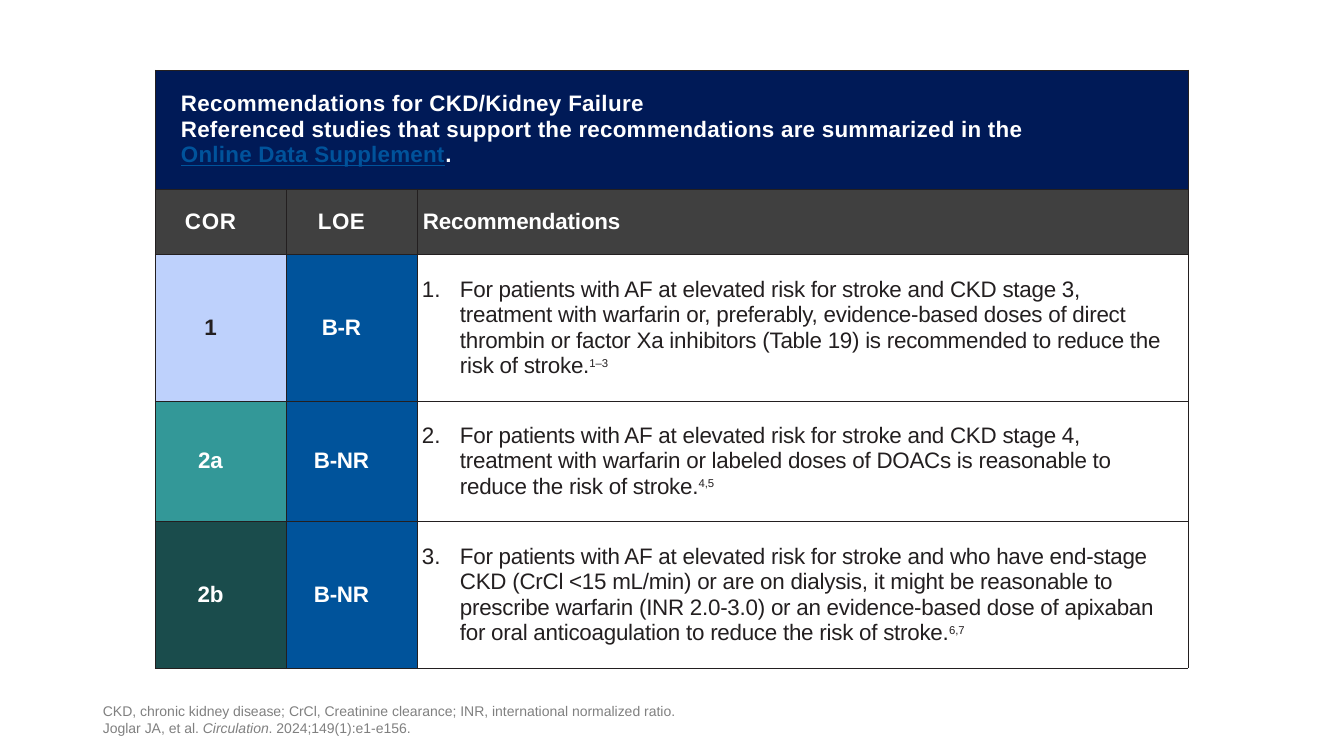
from dataclasses import dataclass

from lxml import etree
from pptx import Presentation
from pptx import util as u
from pptx.dml.color import RGBColor
from pptx.enum import text
from pptx.oxml.ns import qn

PX = 914400 / 100.8


@dataclass(frozen=True)
class Theme:
    font: str = "Arial"
    white: str = "FFFFFF"
    ink: str = "231F20"
    navy: str = "001A57"
    blue: str = "00539B"
    charcoal: str = "404040"
    grey: str = "808080"
    body: int = 16
    reference: int = 14
    footnote: int = 10


theme = Theme()


def px(count):
    """Turn whole pixels into EMU."""
    return u.Emu(round(count * PX))


def add_span(paragraph, words, color, size=theme.body, bold=False, spacing=0.0):
    """Append a formatted run; spacing is letter spacing in points."""
    span = paragraph.add_run()
    span.text = words
    span.font.name = theme.font
    span.font.size = u.Pt(size)
    span.font.bold = bold
    span.font.color.rgb = RGBColor.from_string(color)
    span.font._element.set("spc", str(round(spacing * 100)))
    return span


deck = Presentation()
deck.slide_width, deck.slide_height = px(1344), px(756)
page = deck.slides.add_slide(deck.slide_layouts[6])

column_widths = [131, 131, 771]
row_heights = [119, 65, 147, 120, 147]
table = page.shapes.add_table(
    len(row_heights), len(column_widths), px(155), px(70),
    px(sum(column_widths)), px(sum(row_heights)),
).table
table.first_row = False
table.horz_banding = False
for column, width in zip(table.columns, column_widths):
    column.width = px(width)
for row, height in zip(table.rows, row_heights):
    row.height = px(height)

# Banner
banner = table.cell(0, 0)
banner.merge(table.cell(0, 2))
heading = banner.text_frame.paragraphs[0]
add_span(heading, "Recommendations for CKD/Kidney Failure", theme.white, bold=True, spacing=0.25)
support = banner.text_frame.add_paragraph()
support.line_spacing = 1.03
add_span(support, "Referenced studies that support the recommendations are summarized in the ",
         theme.white, bold=True, spacing=0.2)
support.add_line_break()
link = add_span(support, "Online Data Supplement", theme.blue, bold=True, spacing=0.2)
link.font.underline = True
add_span(support, ".", theme.white, bold=True)

# Column headings and graded recommendations
fills = {(0, column): theme.navy for column in range(3)}
for column, (label, spacing) in enumerate([("COR", 0.5), ("LOE", 0.4), ("Recommendations", -0.1)]):
    paragraph = table.cell(1, column).text_frame.paragraphs[0]
    add_span(paragraph, label, theme.white, bold=True, spacing=spacing)
    fills[1, column] = theme.charcoal

recommendations = [
    ("1", "BED1FC", theme.ink, "B-R",
     "For patients with AF at elevated risk for stroke and CKD stage 3, treatment with "
     "warfarin or, preferably, evidence-based doses of direct thrombin or factor Xa "
     "inhibitors (Table 19) is recommended to reduce the risk of stroke.", "1–3"),
    ("2a", "339898", theme.white, "B-NR",
     "For patients with AF at elevated risk for stroke and CKD stage 4, treatment with "
     "warfarin or labeled doses of DOACs is reasonable to reduce the risk of stroke.", "4,5"),
    ("2b", "1A4C4C", theme.white, "B-NR",
     "For patients with AF at elevated risk for stroke and who have end-stage CKD "
     "(CrCl <15 mL/min) or are on dialysis, it might be reasonable to prescribe warfarin "
     "(INR 2.0-3.0) or an evidence-based dose of apixaban for oral anticoagulation to "
     "reduce the risk of stroke.", "6,7"),
]
for number, (grade, grade_fill, grade_ink, evidence, advice, references) in enumerate(recommendations, 1):
    row = number + 1
    fills[row, 0], fills[row, 1] = grade_fill, theme.blue
    for column, label, ink in [(0, grade, grade_ink), (1, evidence, theme.white)]:
        add_span(table.cell(row, column).text_frame.paragraphs[0], label, ink, bold=True, spacing=-0.2)

    paragraph = table.cell(row, 2).text_frame.paragraphs[0]
    properties = paragraph._p.get_or_add_pPr()
    properties.set("marL", str(px(43)))
    properties.set("indent", str(-px(38)))
    etree.SubElement(properties, qn("a:buFont"), typeface=theme.font)
    etree.SubElement(properties, qn("a:buAutoNum"), type="arabicPeriod", startAt=str(number))
    paragraph.line_spacing = 1.03
    add_span(paragraph, advice, theme.ink, spacing=-0.18)
    reference = add_span(paragraph, references, theme.ink, theme.reference, spacing=-0.1)
    reference.font._element.set("baseline", "35000")

# Insets, alignment, fills and borders
for row in range(len(row_heights)):
    for column in range(len(column_widths)):
        cell = table.cell(row, column)
        cell.vertical_anchor = text.MSO_ANCHOR.MIDDLE
        cell.margin_left = px(20 if row == 0 else 0)
        cell.margin_top = cell.margin_right = cell.margin_bottom = px(20)
        if row > 0 and column < 2:
            cell.text_frame.paragraphs[0].alignment = text.PP_ALIGN.CENTER
        elif row < 2:
            for paragraph in cell.text_frame.paragraphs:
                paragraph._p.get_or_add_pPr().set("marL", str(px(6)))
        if (row, column) in fills:
            cell.fill.solid()
            cell.fill.fore_color.rgb = RGBColor.from_string(fills[row, column])
        else:
            cell.fill.background()
        cell_properties = cell._tc.get_or_add_tcPr()
        for position, side in enumerate(["lnL", "lnR", "lnT", "lnB"]):
            border = etree.Element(qn(f"a:{side}"), w=str(u.Pt(0.25)))
            border_fill = etree.SubElement(border, qn("a:solidFill"))
            etree.SubElement(border_fill, qn("a:srgbClr"), val=theme.ink)
            cell_properties.insert(position, border)

# Footnote
box = page.shapes.add_textbox(px(93), px(701), px(1159), px(40))
frame = box.text_frame
frame.word_wrap = True
frame.vertical_anchor = text.MSO_ANCHOR.BOTTOM
add_span(frame.paragraphs[0],
         "CKD, chronic kidney disease; CrCl, Creatinine clearance; INR, international normalized ratio.",
         theme.grey, theme.footnote)
citation = frame.add_paragraph()
for words, italic in [("Joglar JA, et al. ", False), ("Circulation", True),
                      (". 2024;149(1):e1-e156.", False)]:
    add_span(citation, words, theme.grey, theme.footnote).font.italic = italic

deck.save("out.pptx")
